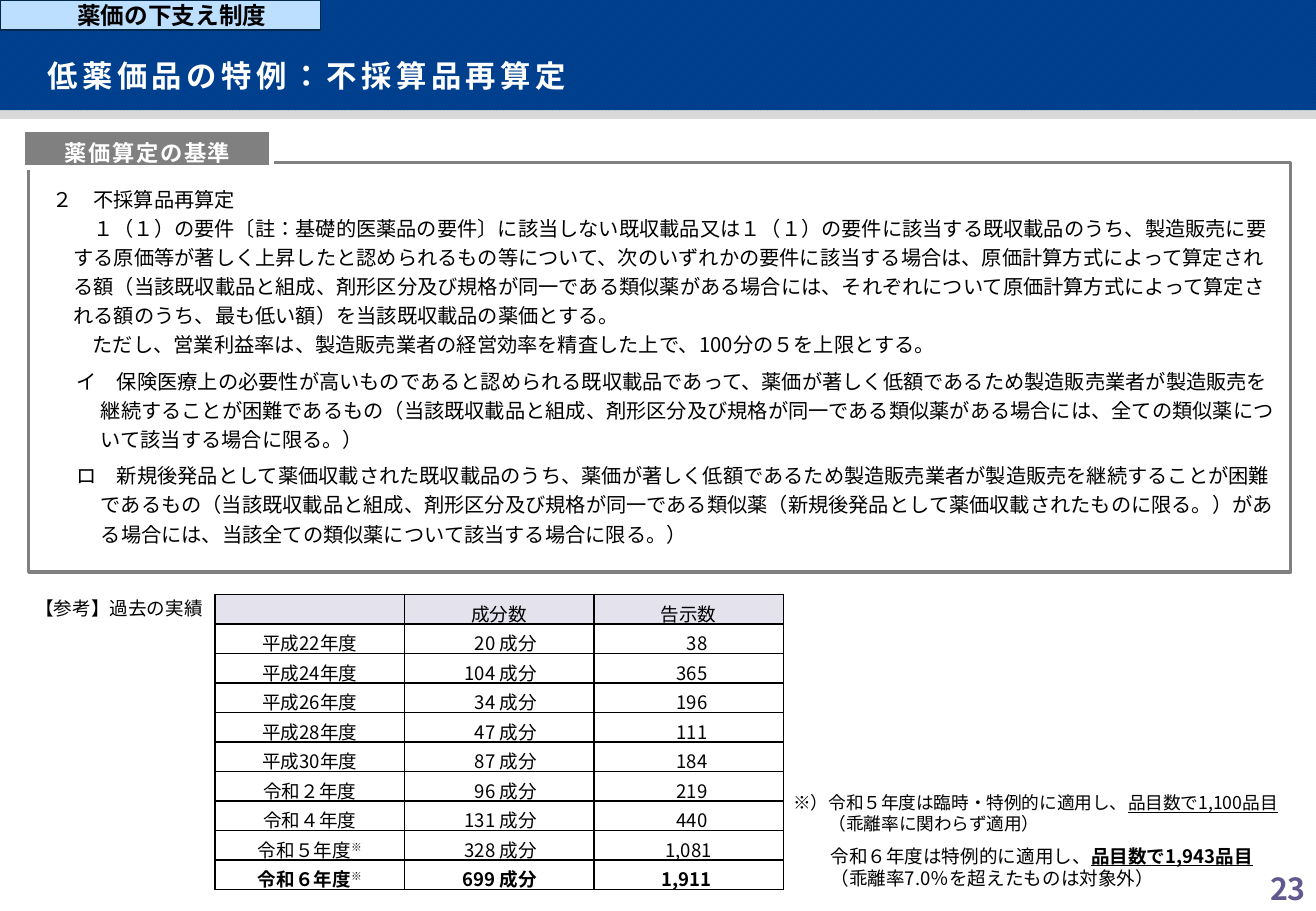
from dataclasses import dataclass, field
from typing import Optional

from lxml.etree import SubElement
from pptx import Presentation
from pptx.dml.color import RGBColor
from pptx.enum.dml import MSO_PATTERN as Pattern
from pptx.enum.lang import MSO_LANGUAGE_ID as Language
from pptx.enum.shapes import MSO_SHAPE as Shape
from pptx.enum.text import MSO_ANCHOR as Anchor, PP_ALIGN as Align
from pptx.oxml import parse_xml
from pptx.oxml.ns import nsdecls, qn
from pptx.util import Pt

COLORS = {
    "band": "004292", "stripe": "003579", "rule": "D9D9D9", "gray": "808080",
    "tag": "BCDFFF", "tag_line": "00284D", "header": "E4E2ED",
    "number": "63598F", "black": "000000", "white": "FFFFFF",
}
JAPANESE_FONT = "Noto Sans CJK JP"


@dataclass
class Span:
    text: str
    size: float = 11
    color: str = "black"
    bold: bool = False
    underline: bool = False
    font: str = JAPANESE_FONT
    spacing: float = 0
    raised: bool = False


@dataclass
class Para:
    spans: list[Span]
    align: Align = Align.LEFT
    margin: float = 0
    indent: float = 0
    line: float = 1
    before: float = 0
    after: float = 0


@dataclass
class Box:
    left: float
    top: float
    width: float
    height: float
    kind: Optional[Shape] = Shape.RECTANGLE
    fill: Optional[str] = None
    line: Optional[str] = None
    line_width: float = 1
    anchor: Anchor = Anchor.TOP
    insets: tuple[float, float, float, float] = (7.2, 3.6, 7.2, 3.6)
    paras: list[Para] = field(default_factory=list)


def color(name: str) -> RGBColor:
    return RGBColor.from_string(COLORS[name])


def apply(target, values: dict) -> None:
    for name, value in values.items():
        setattr(target, name, value)


def write(frame, paras: list[Para]) -> None:
    for index, item in enumerate(paras):
        para = frame.add_paragraph() if index else frame.paragraphs[0]
        apply(para, {"alignment": item.align, "line_spacing": item.line,
                     "space_before": Pt(item.before), "space_after": Pt(item.after)})
        properties = para._p.get_or_add_pPr()
        properties.set("marL", str(Pt(item.margin)))
        properties.set("indent", str(Pt(item.indent)))
        for span in item.spans:
            run = para.add_run()
            run.text = span.text
            apply(run.font, {"size": Pt(span.size), "bold": span.bold,
                             "underline": span.underline, "name": span.font,
                             "language_id": Language.JAPANESE})
            run.font.color.rgb = color(span.color)
            run_properties = run._r.get_or_add_rPr()
            SubElement(run_properties, qn("a:ea"), typeface=JAPANESE_FONT)
            if span.spacing:
                run_properties.set("spc", str(round(span.spacing * 100)))
            if span.raised:
                run_properties.set("baseline", "30000")
        if not item.spans:
            SubElement(para._p, qn("a:endParaRPr"), sz="1100")


def fill_frame(frame, box: Box) -> None:
    left, top, right, bottom = map(Pt, box.insets)
    apply(frame, {"word_wrap": True, "vertical_anchor": box.anchor,
                  "margin_left": left, "margin_top": top,
                  "margin_right": right, "margin_bottom": bottom})
    write(frame, box.paras)


def draw(page, box: Box):
    place = map(Pt, (box.left, box.top, box.width, box.height))
    if box.kind is None:
        shape = page.shapes.add_textbox(*place)
    else:
        shape = page.shapes.add_shape(box.kind, *place)
        shape.shadow.inherit = False
        if box.kind == Shape.ROUNDED_RECTANGLE:
            shape.adjustments[0] = 0
        if box.fill:
            shape.fill.solid()
            shape.fill.fore_color.rgb = color(box.fill)
        else:
            shape.fill.background()
        if box.line:
            shape.line.color.rgb = color(box.line)
            shape.line.width = Pt(box.line_width)
        else:
            shape.line.fill.background()
    fill_frame(shape.text_frame, box)
    return shape


def draw_title(page, box: Box) -> None:
    title = page.shapes.title
    apply(title, {"left": Pt(box.left), "top": Pt(box.top),
                  "width": Pt(box.width), "height": Pt(box.height)})
    fill_frame(title.text_frame, box)
    page.shapes._spTree.append(title._element)


def set_cell(cell, para: Para, right: float, fill: Optional[str]) -> None:
    apply(cell, {"vertical_anchor": Anchor.MIDDLE, "margin_left": Pt(7.2),
                 "margin_top": Pt(2.8), "margin_right": Pt(right), "margin_bottom": Pt(1.4)})
    write(cell.text_frame, [para])
    if fill:
        cell.fill.solid()
        cell.fill.fore_color.rgb = color(fill)
    else:
        cell.fill.background()
    properties = cell._tc.get_or_add_tcPr()
    for index, side in enumerate("LRTB"):
        properties.insert(index, parse_xml(
            f'<a:ln{side} {nsdecls("a")} w="{Pt(1)}"><a:solidFill>'
            f'<a:srgbClr val="{COLORS["black"]}"/></a:solidFill></a:ln{side}>'))


HEADINGS = ("", "成分数", "告示数")
RESULTS = [
    ("平成22年度", "20", "38 "), ("平成24年度", "104", "365 "),
    ("平成26年度", "34", "196 "), ("平成28年度", "47", "111 "),
    ("平成30年度", "87", "184 "), ("令和２年度", "96", "219 "),
    ("令和４年度", "131", "440 "), ("令和５年度※", "328", "1,081"),
    ("令和６年度※", "699", "1,911"),
]


def draw_results(page) -> None:
    row_height, column_width = 17.5, 112.3
    rows, columns = len(RESULTS) + 1, len(HEADINGS)
    table = page.shapes.add_table(rows, columns, Pt(127.5), Pt(352.5),
                                  Pt(column_width * columns), Pt(row_height * rows)).table
    apply(table, {"first_row": False, "horz_banding": False})
    for column in table.columns:
        column.width = Pt(column_width)
    for row in table.rows:
        row.height = Pt(row_height)
    for index, heading in enumerate(HEADINGS):
        spans = [Span(heading)] if heading else []
        set_cell(table.cell(0, index), Para(spans, Align.CENTER), 7.2, "header")
    for index, (year, ingredients, notices) in enumerate(RESULTS, 1):
        bold = index == len(RESULTS)
        year_spans = [Span(year.rstrip("※"), bold=bold)]
        if year.endswith("※"):
            year_spans.append(Span("※", bold=bold, raised=True))
        cells = [(year_spans, Align.CENTER, 7.2),
                 ([Span(f"{ingredients} 成分", bold=bold)], Align.RIGHT, 33.8),
                 ([Span(notices, bold=bold)], Align.RIGHT, 42.5)]
        for column, (spans, align, right) in enumerate(cells):
            set_cell(table.cell(index, column), Para(spans, align), right, None)


CRITERIA = [
    Para([Span("２　不採算品再算定", 12)], margin=12.2, indent=-12.2, line=1.2),
    Para([Span("１（１）の要件〔註：基礎的医薬品の要件〕に該当しない既収載品又は１（１）の要件に該当する既収載品のうち、製造販売に要する原価等が著しく上昇したと認められるもの等について、次のいずれかの要件に該当する場合は、原価計算方式によって算定される額（当該既収載品と組成、剤形区分及び規格が同一である類似薬がある場合には、それぞれについて原価計算方式によって算定される額のうち、最も低い額）を当該既収載品の薬価とする。", 12)], margin=12.2, indent=11.8, line=1.2),
    Para([Span("ただし、営業利益率は、製造販売業者の経営効率を精査した上で、100分の５を上限とする。", 12)], margin=14.4, indent=9.2, line=1.2),
    Para([Span("イ　保険医療上の必要性が高いものであると認められる既収載品であって、薬価が著しく低額であるため製造販売業者が製造販売を継続することが困難であるもの（当該既収載品と組成、剤形区分及び規格が同一である類似薬がある場合には、全ての類似薬について該当する場合に限る。）", 12)], margin=28.4, indent=-14.4, line=1.2, before=4.3),
    Para([Span("ロ　新規後発品として薬価収載された既収載品のうち、薬価が著しく低額であるため製造販売業者が製造販売を継続することが困難であるもの（当該既収載品と組成、剤形区分及び規格が同一である類似薬（新規後発品として薬価収載されたものに限る。）がある場合には、当該全ての類似薬について該当する場合に限る。）", 12)], margin=28.4, indent=-14.4, line=1.2, before=4.3),
]
NOTES = [
    Para([Span("※）令和５年度は臨時・特例的に適用し、", 10.5),
          Span("品目数で1,100品目", 10.5, underline=True)]),
    Para([Span("（乖離率に関わらず適用）", 10.5)], margin=21),
    Para([Span("令和６年度は特例的に適用し、"),
          Span("品目数で1,943品目", bold=True, underline=True)], margin=22, before=6),
    Para([Span("（乖離率7.0％を超えたものは対象外）")], margin=22),
]
TITLE = Box(0, 0, 780, 65.5, anchor=Anchor.BOTTOM, insets=(28, 26, 26, 10), paras=[
    Para([Span("低薬価品の特例：不採算品再算定", 18, "white", True, font="Karla", spacing=2.7)], line=0.9)])
BOXES = [
    Box(17, 96.5, 748, 242.6, line="gray", line_width=2,
        insets=(14.4, 11.5, 8.6, 2.9), paras=CRITERIA),
    Box(13.5, 76.5, 147.6, 23, Shape.ROUNDED_RECTANGLE, "gray", "white", 3, Anchor.MIDDLE,
        paras=[Para([Span("薬価算定の基準", 13.2, "white", True, spacing=1)],
                    Align.CENTER, line=1.3, after=8)]),
    Box(0, 350.2, 127.4, 20.9, None,
        paras=[Para([Span("【参考】過去の実績")], Align.RIGHT)]),
    Box(0, 0, 190, 18, fill="tag", line="tag_line", anchor=Anchor.MIDDLE,
        paras=[Para([Span("薬価の下支え制度", 14, bold=True, font="Karla")],
                    Align.CENTER, margin=13.7)]),
    Box(730.8, 511, 49, 29, fill="white", anchor=Anchor.BOTTOM, insets=(5.8, 2.9, 5.8, 2.9),
        paras=[Para([Span("23", 18, "number", True)], Align.RIGHT)]),
    Box(470.2, 443.5, 298.8, 83.5, None, anchor=Anchor.BOTTOM,
        insets=(0, 0, 0, 0), paras=NOTES),
]


def main() -> None:
    deck = Presentation()
    apply(deck, {"slide_width": Pt(780), "slide_height": Pt(540)})
    page = deck.slides.add_slide(deck.slide_layouts[5])
    band = draw(page, Box(0, 0, 780, 65.5))
    band.fill.patterned()
    band.fill.pattern = Pattern.DARK_UPWARD_DIAGONAL
    band.fill.fore_color.rgb = color("stripe")
    band.fill.back_color.rgb = color("band")
    draw(page, Box(0, 65.5, 780, 5, fill="rule"))
    draw_title(page, TITLE)
    for box in BOXES:
        draw(page, box)
    draw_results(page)
    deck.save("out.pptx")


if __name__ == "__main__":
    main()
